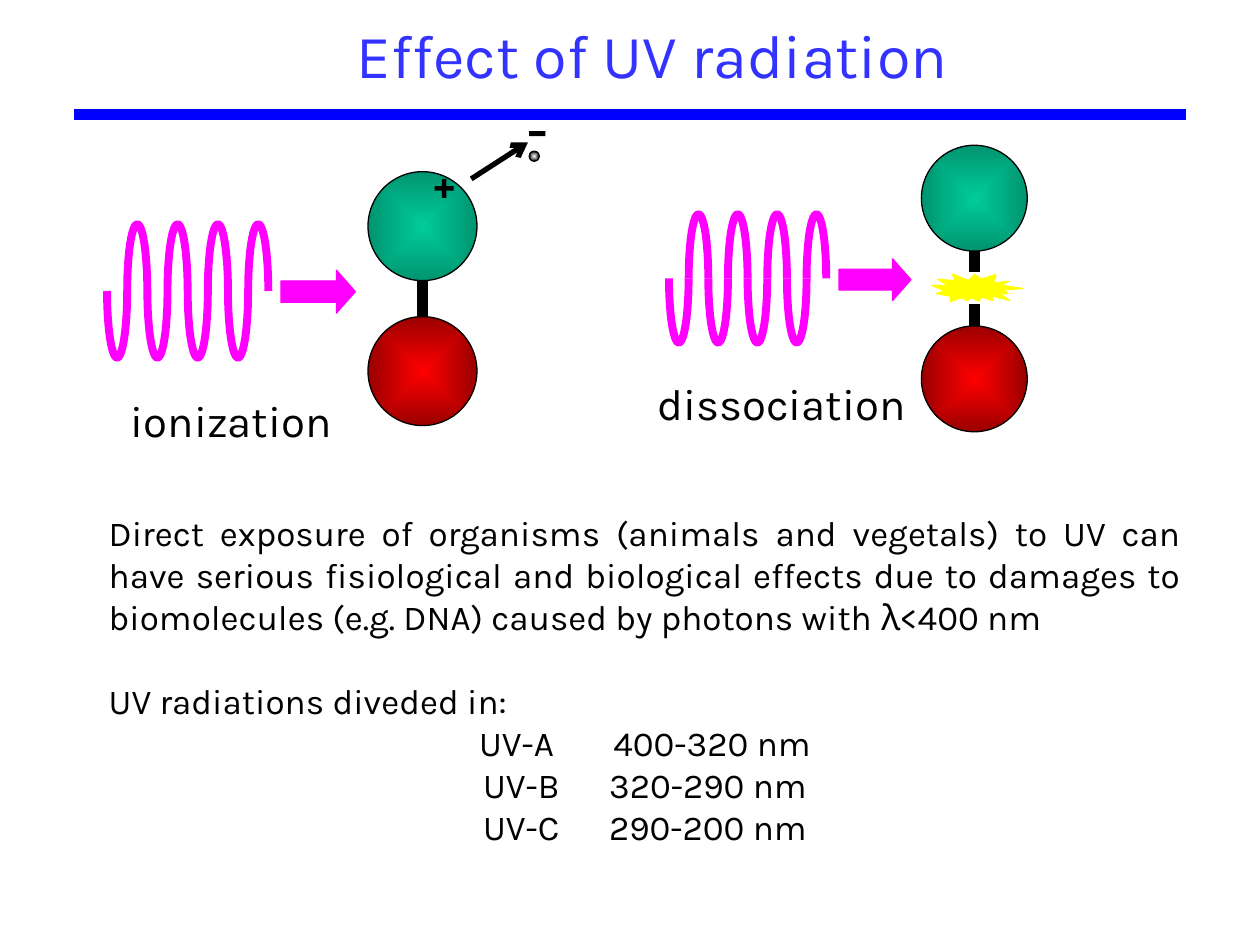
from dataclasses import dataclass
from math import cos, pi, sin

from lxml.etree import SubElement
from pptx import Presentation
from pptx.dml.color import RGBColor
from pptx.enum.shapes import MSO_CONNECTOR, MSO_SHAPE
from pptx.enum.text import MSO_ANCHOR, PP_ALIGN
from pptx.oxml.ns import qn
from pptx.util import Inches, Pt

WIDTH, HEIGHT = Inches(10), Inches(7.5)
COLUMNS, ROWS = 100, 75


@dataclass(frozen=True)
class Theme:
    font: str = "Karla"
    title_size: float = 35
    label_size: float = 25
    body_size: float = 20
    title: str = "3333FF"
    rule: str = "0000FF"
    ink: str = "000000"
    ray: str = "FF00FF"
    flash: str = "FFFF00"
    green: tuple = ("00CC99", "009470")
    red: tuple = ("FF0000", "9A0000")
    electron: tuple = ("FFFFFF", "000000")
    outline: float = 0.75
    arrow: float = 3
    wave: float = 4.5
    bar: float = 6


THEME = Theme()


def col(count):
    return round(WIDTH * count / COLUMNS)


def row(count):
    return round(HEIGHT * count / ROWS)


def place(left, top, width, height):
    return col(left), row(top), col(width), row(height)


def rgb(value):
    return RGBColor.from_string(value)


def set_line(line, color, weight):
    line.color.rgb = rgb(color)
    line.width = Pt(weight)


def add_text(canvas, area, paragraphs, *, size, color=THEME.ink,
             anchor=MSO_ANCHOR.TOP):
    """Each paragraph is (text, alignment, points of space before)."""
    box = canvas.add_textbox(*place(*area))
    frame = box.text_frame
    frame.word_wrap = True
    frame.vertical_anchor = anchor
    for index, (text, align, space) in enumerate(paragraphs):
        para = frame.add_paragraph() if index else frame.paragraphs[0]
        para.alignment = align
        para.space_before = Pt(space)
        span = para.add_run()
        span.text = text
        span.font.name = THEME.font
        span.font.size = Pt(size)
        span.font.color.rgb = rgb(color)


def add_line(canvas, start, end, *, color=THEME.ink, weight=THEME.bar, arrow=False):
    line = canvas.add_connector(MSO_CONNECTOR.STRAIGHT, col(start[0]), row(start[1]),
                                col(end[0]), row(end[1]))
    set_line(line.line, color, weight)
    if arrow:
        SubElement(line.line._get_or_add_ln(), qn("a:tailEnd"), type="arrow")
    SubElement(line._element.spPr, qn("a:effectLst"))


def add_solid(canvas, kind, area, color, *, outlined=True):
    shape = canvas.add_shape(kind, *place(*area))
    shape.shadow.inherit = False
    shape.fill.solid()
    shape.fill.fore_color.rgb = rgb(color)
    if outlined:
        set_line(shape.line, color, THEME.outline)
    else:
        shape.line.fill.background()
    return shape


def add_ball(canvas, center, size, colors):
    """Circle shaded from the first colour at its centre to the second."""
    x, y = center
    ball = canvas.add_shape(MSO_SHAPE.OVAL,
                            *place(x - size / 2, y - size / 2, size, size))
    ball.shadow.inherit = False
    set_line(ball.line, THEME.ink, THEME.outline)
    ball.fill.gradient()
    for stop, color, position in zip(ball.fill.gradient_stops, colors, (0, 1)):
        stop.color.rgb = rgb(color)
        stop.position = position
    gradient = ball._element.spPr.find(qn("a:gradFill"))
    gradient.remove(gradient.find(qn("a:lin")))
    shade = SubElement(gradient, qn("a:path"), path="shape")
    SubElement(shade, qn("a:fillToRect"),
               {side: "50000" for side in ("l", "t", "r", "b")})


def add_arc(canvas, x, y, width, swing, steps=24):
    """Half ellipse from (x, y); a positive swing goes down."""
    angles = [pi * step / steps for step in range(1, steps + 1)]
    builder = canvas.build_freeform(col(x), row(y))
    builder.add_line_segments(
        [(col(x + width * (1 - cos(angle)) / 2), row(y + swing * sin(angle)))
         for angle in angles], close=False)
    arc = builder.convert_to_shape()
    arc.shadow.inherit = False
    arc.fill.background()
    set_line(arc.line, THEME.ray, THEME.wave)


def add_photon(canvas, start, arc_width, amplitude, arrow_area, arcs=8):
    x, y = start
    for index in range(arcs):
        add_arc(canvas, x + index * arc_width, y, arc_width,
                amplitude * (-1) ** index)
    arrow = add_solid(canvas, MSO_SHAPE.RIGHT_ARROW, arrow_area, THEME.ray)
    arrow.adjustments[1] = 0.44


def add_molecule(canvas, x, green_y, red_y, size, bonds):
    for top, bottom in bonds:
        add_line(canvas, (x, top), (x, bottom))
    add_ball(canvas, (x, green_y), size, THEME.green)
    add_ball(canvas, (x, red_y), size, THEME.red)


def add_ionization(slide):
    canvas = slide.shapes.add_group_shape().shapes
    add_photon(canvas, (8.5, 23.1), 1.6, 5.3, (22.3, 21.45, 5.9, 3.4))
    add_molecule(canvas, 33.53, 17.95, 29.45, 8.65, [(20.3, 27.5)])
    add_line(canvas, (37.4, 14.2), (41.9, 11.3), weight=THEME.arrow, arrow=True)
    add_ball(canvas, (42.4, 12.4), 0.8, THEME.electron)
    plus = add_solid(canvas, MSO_SHAPE.CROSS, (34.5, 14.2, 1.5, 1.5), THEME.ink,
                     outlined=False)
    plus.adjustments[0] = 0.38
    add_solid(canvas, MSO_SHAPE.RECTANGLE, (42, 10.4, 1.3, 0.4), THEME.ink,
              outlined=False)


def add_dissociation(slide):
    canvas = slide.shapes.add_group_shape().shapes
    add_photon(canvas, (53.1, 22.1), 1.56, 5.1, (66.6, 20.55, 5.7, 3.3))
    add_molecule(canvas, 77.33, 15.73, 30.07, 8.4, [(14.6, 21.6), (24.1, 31.2)])
    flash = add_solid(canvas, MSO_SHAPE.EXPLOSION2, (73.95, 21.6, 7.2, 2.6), THEME.flash)
    flash.rotation = 7.9


def main():
    deck = Presentation()
    deck.slide_width, deck.slide_height = WIDTH, HEIGHT
    slide = deck.slides.add_slide(deck.slide_layouts[6])
    canvas = slide.shapes
    left, center, justify = PP_ALIGN.LEFT, PP_ALIGN.CENTER, PP_ALIGN.JUSTIFY

    add_text(canvas, (5.85, -3, 91.9, 14.5), [("Effect of UV radiation", center, 0)],
             size=THEME.title_size, color=THEME.title, anchor=MSO_ANCHOR.MIDDLE)
    add_line(canvas, (5.9, 9.1), (94.1, 9.1), color=THEME.rule)
    add_ionization(slide)
    add_dissociation(slide)
    for label, x, y in (("dissociation", 51.2, 29.4), ("ionization", 9.4, 30.75)):
        add_text(canvas, (x, y, 24.7, 5.2), [(label, left, 0)], size=THEME.label_size)
    add_text(canvas, (7.64, 40.1, 87.1, 28), [
        ("Direct exposure of organisms (animals and vegetals) to UV can have serious "
         "fisiological and biological effects due to damages to biomolecules "
         "(e.g. DNA) caused by photons with λ<400 nm", justify, 0),
        ("UV radiations diveded in:", justify, 24),
        ("UV-A\t 400-320 nm", center, 0),
        ("UV-B\t320-290 nm", center, 0),
        ("UV-C\t290-200 nm", center, 0),
    ], size=THEME.body_size)
    deck.save("out.pptx")


if __name__ == "__main__":
    main()
